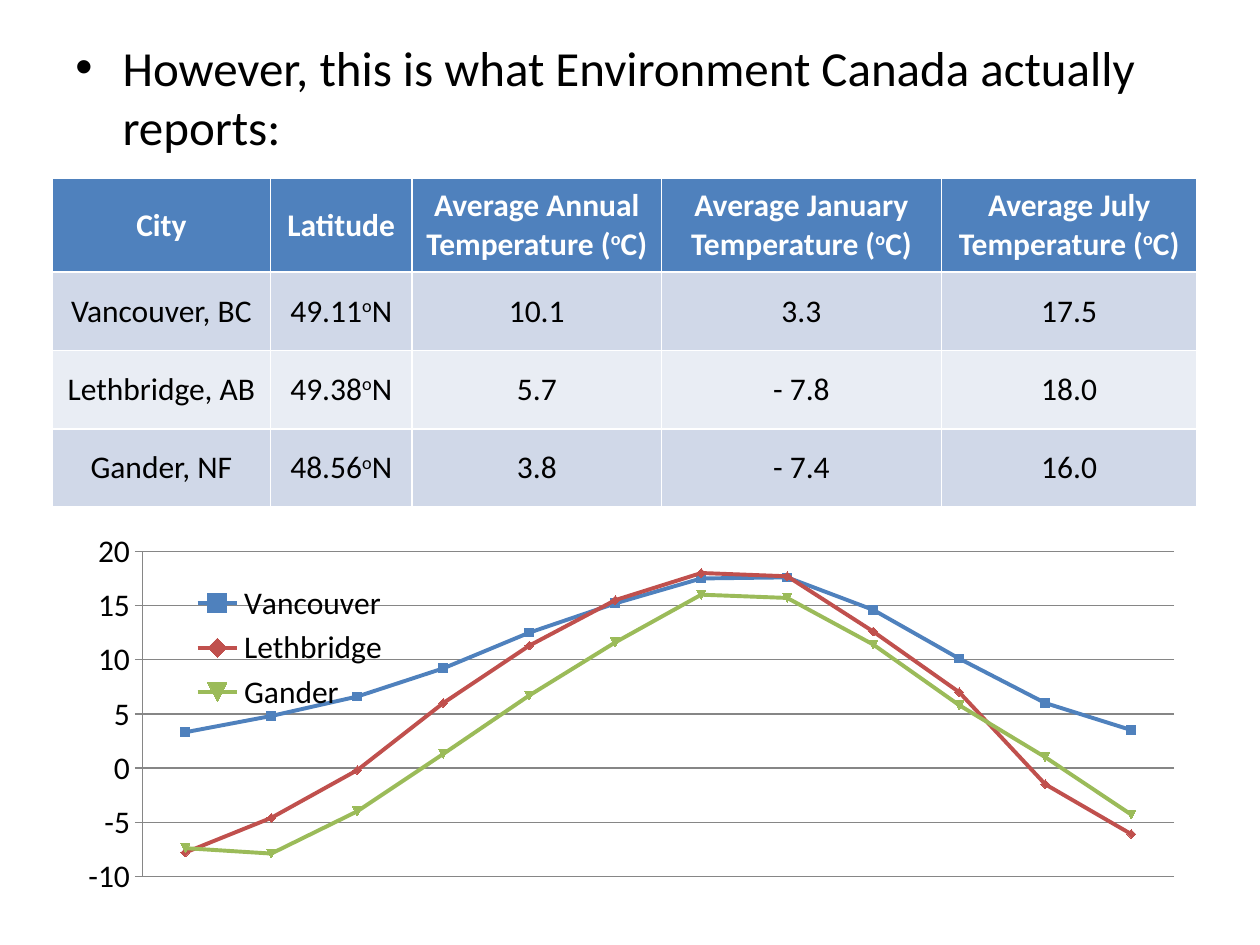
from lxml import etree
from pptx import Presentation
from pptx.chart.data import CategoryChartData
from pptx.dml.color import RGBColor
from pptx.enum.chart import XL_CHART_TYPE, XL_LEGEND_POSITION, XL_TICK_MARK
from pptx.enum.text import MSO_ANCHOR, PP_ALIGN
from pptx.oxml import parse_xml
from pptx.oxml.ns import nsdecls, qn
from pptx.util import Pt

LINE_MARKERS = XL_CHART_TYPE.LINE_MARKERS
LEGEND_LEFT = XL_LEGEND_POSITION.LEFT
TICK_OUT, TICK_NONE = XL_TICK_MARK.OUTSIDE, XL_TICK_MARK.NONE
MIDDLE, CENTER = MSO_ANCHOR.MIDDLE, PP_ALIGN.CENTER
FONT = "Calibri"
COLORS = {
    "text": "000000", "header_text": "FFFFFF", "header": "4F81BD",
    "odd_row": "D0D8E8", "even_row": "E9EDF4", "grid": "868686",
    "Vancouver": "4F81BD", "Lethbridge": "C0504D", "Gander": "9BBB59",
}


def style_font(font, size, color, bold=False):
    font.name = FONT
    font.size = Pt(size)
    font.bold = bold
    font.color.rgb = RGBColor.from_string(COLORS[color])


def manual_layout(x, y, w, h, inner=False):
    target = '<c:layoutTarget val="inner"/>' if inner else ""
    return parse_xml(
        f'<c:layout {nsdecls("c")}><c:manualLayout>{target}'
        '<c:xMode val="edge"/><c:yMode val="edge"/>'
        f'<c:x val="{x}"/><c:y val="{y}"/><c:w val="{w}"/><c:h val="{h}"/>'
        '</c:manualLayout></c:layout>')


prs = Presentation()
prs.slide_width, prs.slide_height = Pt(720), Pt(540)
slide = prs.slides.add_slide(prs.slide_layouts[6])

intro = slide.shapes.add_textbox(Pt(36), Pt(18), Pt(648), Pt(78)).text_frame
intro.word_wrap = True
statement = intro.paragraphs[0]
statement.text = "However, this is what Environment Canada actually reports:"
statement.space_before = Pt(5.6)
style_font(statement.font, 28, "text")
bullet_props = statement._p.get_or_add_pPr()
bullet_props.set("marL", str(Pt(27)))
bullet_props.set("indent", str(Pt(-27)))
bullet_font = etree.Element(qn("a:buFont"), typeface="Arial")
bullet_char = etree.Element(qn("a:buChar"), char="•")
bullet_props.find(qn("a:spcBef")).addnext(bullet_font)
bullet_font.addnext(bullet_char)

rows = [
    ["City", "Latitude", "Average Annual Temperature (^o^C)",
     "Average January Temperature (^o^C)", "Average July Temperature (^o^C)"],
    ["Vancouver, BC", "49.11^o^N", "10.1", "3.3", "17.5"],
    ["Lethbridge, AB", "49.38^o^N", "5.7", "- 7.8", "18.0"],
    ["Gander, NF", "48.56^o^N", "3.8", "- 7.4", "16.0"],
]
column_widths = [124.5, 81, 142.5, 160, 146]
row_heights = [53.5, 44.8, 44.8, 44.8]
climate = slide.shapes.add_table(
    len(rows), len(column_widths), Pt(30), Pt(102),
    Pt(sum(column_widths)), Pt(sum(row_heights))).table
for column, width in zip(climate.columns, column_widths):
    column.width = Pt(width)
for r, (entries, height) in enumerate(zip(rows, row_heights)):
    climate.rows[r].height = Pt(height)
    fill = "header" if r == 0 else "odd_row" if r % 2 else "even_row"
    for c, entry in enumerate(entries):
        cell = climate.cell(r, c)
        cell.fill.solid()
        cell.fill.fore_color.rgb = RGBColor.from_string(COLORS[fill])
        cell.vertical_anchor = MIDDLE
        line = cell.text_frame.paragraphs[0]
        line.alignment = CENTER
        style_font(line.font, 18, "text" if r else "header_text", r == 0)
        for i, part in enumerate(entry.split("^")):
            run = line.add_run()
            run.text = part
            if i % 2:
                run.font._element.set("baseline", "30000")

monthly = {
    "Vancouver": [3.3, 4.8, 6.6, 9.2, 12.5, 15.2, 17.5, 17.6, 14.6, 10.1, 6, 3.5],
    "Lethbridge": [-7.8, -4.6, -0.2, 6, 11.3, 15.5, 18, 17.7, 12.6, 7, -1.5, -6.1],
    "Gander": [-7.4, -7.9, -4, 1.3, 6.7, 11.6, 16, 15.7, 11.4, 5.8, 1, -4.3],
}
temperatures = CategoryChartData()
temperatures.categories = [str(month) for month in range(1, 13)]
for city, values in monthly.items():
    temperatures.add_series(city, values)
chart = slide.shapes.add_chart(
    LINE_MARKERS, Pt(36), Pt(300), Pt(648), Pt(216), temperatures).chart
chart.has_title = False
style_font(chart.font, 18, "text")

for series in chart.plots[0].series:
    color = RGBColor.from_string(COLORS[series.name])
    series.smooth = False
    series.format.line.width = Pt(2.25)
    series.format.line.color.rgb = color
    series.marker.size = 5
    series.marker.format.fill.solid()
    series.marker.format.fill.fore_color.rgb = color
    series.marker.format.line.color.rgb = color

chart.category_axis.visible = False
degrees = chart.value_axis
degrees.minimum_scale, degrees.maximum_scale, degrees.major_unit = -10, 20, 5
degrees.major_tick_mark, degrees.minor_tick_mark = TICK_OUT, TICK_NONE
degrees.has_major_gridlines = True
for axis_line in (degrees.format.line, degrees.major_gridlines.format.line):
    axis_line.width = Pt(0.75)
    axis_line.color.rgb = RGBColor.from_string(COLORS["grid"])

chart.has_legend = True
legend = chart.legend
legend.position = LEGEND_LEFT
legend.include_in_layout = True
style_font(legend.font, 18, "text")
plot_area = chart._chartSpace.chart.plotArea
for holder, layout in (
        (plot_area, manual_layout(0.07, 0.07, 0.91, 0.86, inner=True)),
        (legend._element, manual_layout(0.11, 0.14, 0.18, 0.37))):
    for old in holder.findall(qn("c:layout")):
        holder.remove(old)
    holder.insert(0 if holder is plot_area else 1, layout)

prs.save("out.pptx")
